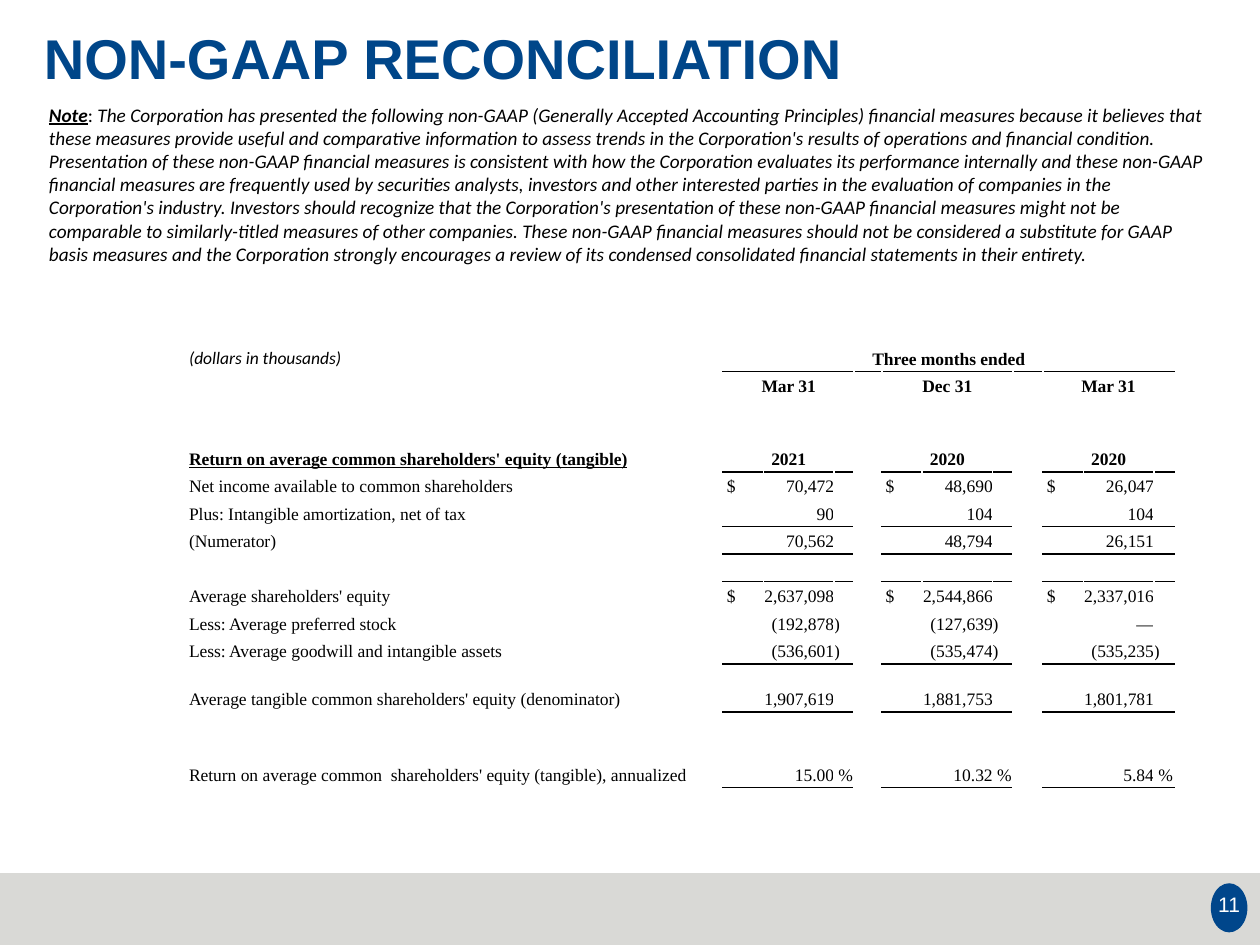
from lxml import etree
from pptx import Presentation
from pptx.dml.color import RGBColor
from pptx.enum.shapes import MSO_SHAPE
from pptx.enum.text import MSO_ANCHOR, PP_ALIGN
from pptx.oxml.ns import qn
from pptx.util import Inches, Pt

RECT, OVAL = MSO_SHAPE.RECTANGLE, MSO_SHAPE.OVAL
TOP, MIDDLE, BOTTOM = MSO_ANCHOR.TOP, MSO_ANCHOR.MIDDLE, MSO_ANCHOR.BOTTOM
LEFT, CENTER, RIGHT = PP_ALIGN.LEFT, PP_ALIGN.CENTER, PP_ALIGN.RIGHT

COLORS = {
    "title": "004689",
    "badge": "00468B",
    "footer": "D9D9D6",
    "black": "000000",
    "white": "FFFFFF",
}
SERIF = "Times New Roman"

NOTE_SENTENCES = [
    "The Corporation has presented the following non-GAAP (Generally Accepted Accounting "
    "Principles) financial measures because it believes that these measures provide useful "
    "and comparative information to assess trends in the Corporation's results of operations "
    "and financial condition.",
    "Presentation of these non-GAAP financial measures is consistent with how the Corporation "
    "evaluates its performance internally and these non-GAAP financial measures are frequently "
    "used by securities analysts, investors and other interested parties in the evaluation of "
    "companies in the Corporation's industry.",
    "Investors should recognize that the Corporation's presentation of these non-GAAP "
    "financial measures might not be comparable to similarly-titled measures of other "
    "companies.",
    "These non-GAAP financial measures should not be considered a substitute for GAAP basis "
    "measures and the Corporation strongly encourages a review of its condensed consolidated "
    "financial statements in their entirety.",
]

SPAN, HEADING, DOLLARS, AMOUNT, BLANK = range(5)
ROWS = [
    (SPAN, "(dollars in thousands)", ["Three months ended"]),
    (HEADING, "", ["Mar 31", "Dec 31", "Mar 31"]),
    (BLANK, "", [""] * 3),
    (HEADING, "Return on average common shareholders' equity (tangible)", ["2021", "2020", "2020"]),
    (DOLLARS, "Net income available to common shareholders", ["70,472", "48,690", "26,047"]),
    (AMOUNT, "Plus: Intangible amortization, net of tax", ["90", "104", "104"]),
    (AMOUNT, "(Numerator)", ["70,562", "48,794", "26,151"]),
    (BLANK, "", [""] * 3),
    (DOLLARS, "Average shareholders' equity", ["2,637,098", "2,544,866", "2,337,016"]),
    (AMOUNT, "Less: Average preferred stock", ["(192,878)", "(127,639)", "—"]),
    (AMOUNT, "Less: Average goodwill and intangible assets", ["(536,601)", "(535,474)", "(535,235)"]),
    (AMOUNT, "Average tangible common shareholders' equity (denominator)",
     ["1,907,619", "1,881,753", "1,801,781"]),
    (BLANK, "", [""] * 3),
    (AMOUNT, "Return on average common  shareholders' equity (tangible), annualized",
     ["15.00%", "10.32%", "5.84%"]),
    (BLANK, "", [""] * 3),
]
PERIOD = [0.32, 0.56, 0.16]
COLUMNS = [3.7, 0.57, *PERIOD, 0.22, *PERIOD, 0.24, *PERIOD]
PERIOD_STARTS = [2, 6, 10]
TALL_ROWS = {3: 0.36, 11: 0.38, 13: 0.38}
RULED_ROWS = {0, 3, 5, 6, 7, 10, 11, 13}
NARROW_LABELS = {0, 9}


def color(name):
    return RGBColor.from_string(COLORS[name])


def add_run(paragraph, text, size, font, tint="black", bold=False, italic=False, underline=False):
    run = paragraph.add_run()
    run.text = text
    run.font.size = Pt(size)
    run.font.name = font
    run.font.color.rgb = color(tint)
    run.font.bold = bold
    run.font.italic = italic
    run.font.underline = underline


def add_text_area(slide, box, anchor=TOP, align=LEFT):
    frame = slide.shapes.add_textbox(*map(Inches, box)).text_frame
    frame.word_wrap = True
    frame.vertical_anchor = anchor
    frame.margin_left = frame.margin_right = frame.margin_bottom = Inches(0.1)
    frame.margin_top = Inches(0.06)
    paragraph = frame.paragraphs[0]
    paragraph.alignment = align
    return paragraph


def add_panel(slide, preset, box, tint):
    panel = slide.shapes.add_shape(preset, *map(Inches, box))
    panel.shadow.inherit = False
    panel.fill.solid()
    panel.fill.fore_color.rgb = color(tint)
    panel.line.fill.background()


def add_footer(slide, box):
    left, top, width, height = box
    add_panel(slide, RECT, box, "footer")
    add_panel(slide, OVAL, (left + width - 0.39, top + 0.08, 0.29, 0.39), "badge")
    number = add_text_area(slide, (left + width - 0.48, top + 0.07, 0.47, 0.39), MIDDLE, CENTER)
    add_run(number, "11", 12, "Arial", "white")


def add_title(slide, box):
    title = add_text_area(slide, box)
    title.line_spacing = 0.9
    add_run(title, "NON-GAAP RECONCILIATION", 32, "Arial", "title", bold=True)


def add_note(slide, box):
    note = add_text_area(slide, box)
    add_run(note, "Note", 11, "Calibri", bold=True, italic=True, underline=True)
    add_run(note, ": ", 11, "Calibri")
    add_run(note, " ".join(NOTE_SENTENCES), 11, "Calibri", italic=True)


def is_ruled(row, column):
    in_period = any(start <= column < start + 3 for start in PERIOD_STARTS)
    return row in RULED_ROWS and (in_period or row == 0 and column >= 2)


def style_cell(cell, row, column):
    edges = {
        "lnL": "white",
        "lnR": "white",
        "lnT": "black" if is_ruled(row - 1, column) else "white",
        "lnB": "black" if is_ruled(row, column) else "white",
    }
    properties = cell._tc.get_or_add_tcPr()
    for edge, tint in edges.items():
        line = etree.SubElement(properties, qn("a:" + edge), w=str(Pt(1)))
        fill = etree.SubElement(line, qn("a:solidFill"))
        etree.SubElement(fill, qn("a:srgbClr"), val=COLORS[tint])
    cell.fill.background()
    cell.vertical_anchor = BOTTOM
    cell.margin_left = cell.margin_right = Inches(0.03)
    cell.margin_top, cell.margin_bottom = 0, Inches(0.02)
    etree.SubElement(cell.text_frame.paragraphs[0]._p, qn("a:endParaRPr"), sz="1000")


def write_cell(cell, text, align=LEFT, margins=(0.03, 0.03), font=SERIF, **style):
    cell.margin_left, cell.margin_right = map(Inches, margins)
    paragraph = cell.text_frame.paragraphs[0]
    paragraph.alignment = align
    paragraph.line_spacing = 1.0
    if text:
        add_run(paragraph, text, 10, font, **style)


def write_label(table, row, kind, label):
    cell = table.cell(row, 0)
    if label and row not in NARROW_LABELS:
        cell.merge(table.cell(row, 1))
    if kind == SPAN:
        write_cell(cell, label, font="Calibri", italic=True)
    else:
        write_cell(cell, label, bold=kind == HEADING, underline=kind == HEADING)


def write_value(table, row, start, kind, value):
    first, middle, last = (table.cell(row, start + i) for i in range(3))
    if kind == DOLLARS:
        write_cell(first, "$", margins=(0.03, 0))
        write_cell(middle, value, RIGHT, (0, 0))
    elif kind == AMOUNT:
        first.merge(middle)
        number = value.rstrip(")%")
        suffix = value[len(number):]
        write_cell(first, number, RIGHT, (0.03, 0))
        write_cell(last, suffix, RIGHT if suffix == "%" else LEFT, (0, 0.01 if suffix == "%" else 0))
    else:
        first.merge(table.cell(row, 12) if kind == SPAN else last)
        write_cell(first, value, CENTER, bold=True)


def add_reconciliation(slide, box):
    table = slide.shapes.add_table(len(ROWS), len(COLUMNS), *map(Inches, box)).table
    table.first_row = table.horz_banding = False
    for column, width in zip(table.columns, COLUMNS):
        column.width = Inches(width)
    plain_height = (box[3] - sum(TALL_ROWS.values())) / (len(ROWS) - len(TALL_ROWS))
    for row, (kind, label, values) in enumerate(ROWS):
        table.rows[row].height = Inches(TALL_ROWS.get(row, plain_height))
        for column in range(len(COLUMNS)):
            style_cell(table.cell(row, column), row, column)
        write_label(table, row, kind, label)
        for start, value in zip(PERIOD_STARTS, values):
            write_value(table, row, start, kind, value)


def main():
    deck = Presentation()
    deck.slide_width, deck.slide_height = Inches(10), Inches(7.5)
    slide = deck.slides.add_slide(deck.slide_layouts[6])
    add_footer(slide, (0, 6.93, 10, 0.57))
    add_title(slide, (0.25, 0.19, 9.67, 1.14))
    add_note(slide, (0.29, 0.76, 9.41, 1.4))
    add_reconciliation(slide, (1.47, 2.73, 7.85, 3.74))
    deck.save("out.pptx")


if __name__ == "__main__":
    main()
